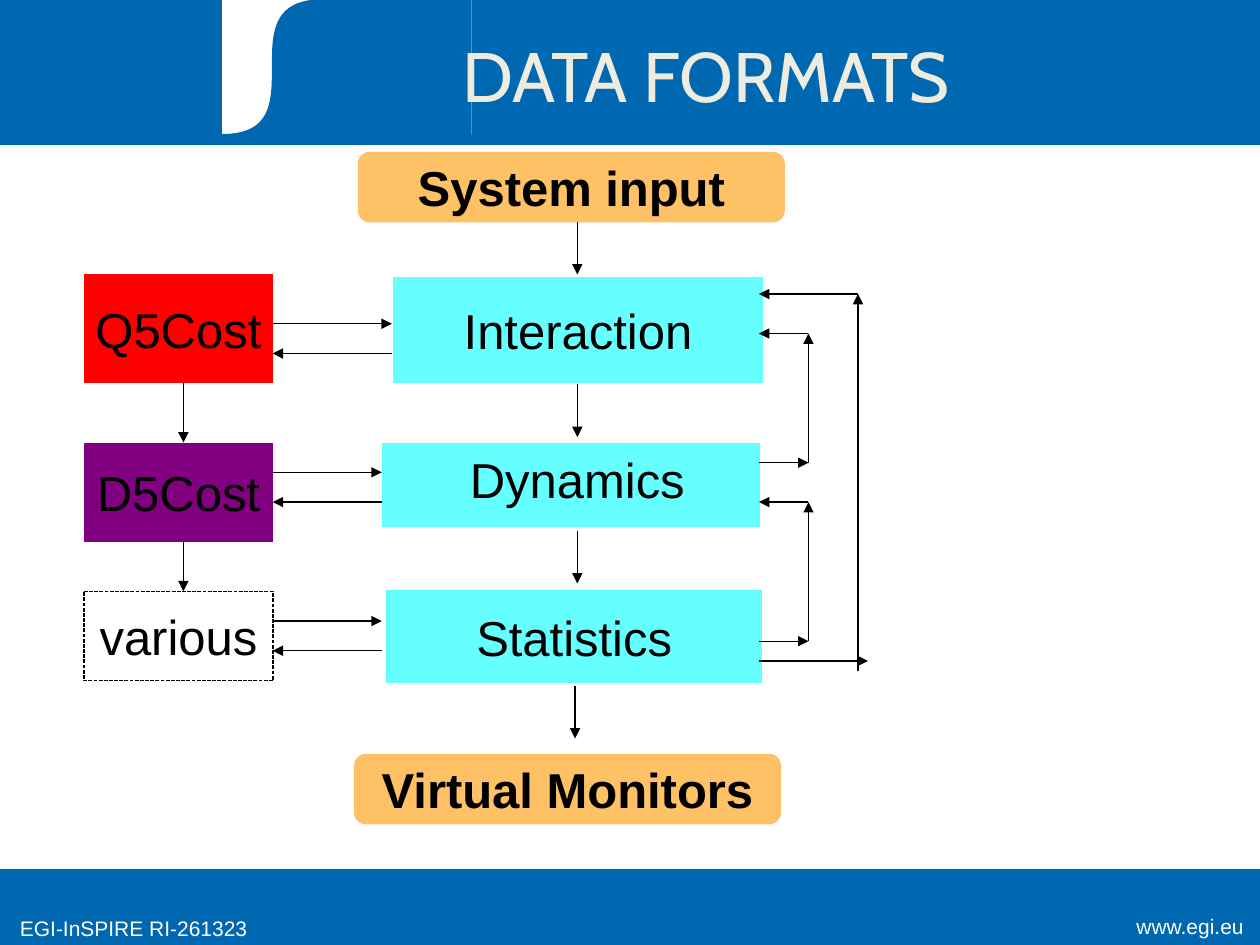
from lxml.etree import SubElement
from pptx import Presentation
from pptx.dml.color import RGBColor
from pptx.enum.dml import MSO_LINE
from pptx.enum.shapes import MSO_CONNECTOR, MSO_SHAPE
from pptx.enum.text import MSO_ANCHOR, PP_ALIGN
from pptx.oxml.ns import qn
from pptx.util import Pt


def paint(form, color):
    """Fill a colour format (fill or font) given as a hex string."""
    if hasattr(form, "solid"):
        form.solid()
        form = form.fore_color
    else:
        form = form.color
    form.rgb = RGBColor.from_string(color)


def write(shape, text, color="000000", size=28, face="Arial", bold=False,
          align=PP_ALIGN.CENTER, anchor=MSO_ANCHOR.MIDDLE, wrap=False):
    frame = shape.text_frame
    frame.word_wrap = wrap
    frame.vertical_anchor = anchor
    para = frame.paragraphs[0]
    para.alignment = align
    run = para.add_run()
    run.text = text
    for key, value in {"size": Pt(size), "name": face, "bold": bold}.items():
        setattr(run.font, key, value)
    paint(run.font, color)


deck = Presentation()
deck.slide_width, deck.slide_height = Pt(720), Pt(540)
slide = deck.slides.add_slide(deck.slide_layouts[6])
shapes = slide.shapes
blue, white, cyan, amber = "0067B1", "FFFFFF", "66FFFF", "FFC165"

# Header and footer bands, with the white tab in the header
for x, y, w, h, color in [(0, 496.8, 720, 43.2, blue), (0, 0, 720, 82.4, blue),
                          (127.2, 0, 142, 77, white)]:
    band = shapes.add_shape(MSO_SHAPE.RECTANGLE, Pt(x), Pt(y), Pt(w), Pt(h))
    band.shadow.inherit = False
    paint(band.fill, color)
    paint(band.line.fill, color)
    band.line.width = Pt(0.75)

# S-shaped edge of the tab: a cubic curve sampled in small steps
left, turn, right, base = 127.2, 184.3, 269.2, 77
edge = []
for step in range(41):
    t = step / 40
    s = 1 - t
    edge.append((left * (s**3 + 3 * s * t**2) + turn * (3 * s**2 * t + t**3),
                 base * (s**3 + 3 * s**2 * t)))
pen = shapes.build_freeform(Pt(right), Pt(0), scale=1.0)
pen.add_line_segments([(Pt(x), Pt(y)) for x, y in [(right, base)] + edge])
curve = pen.convert_to_shape()
curve.shadow.inherit = False
paint(curve.fill, blue)
paint(curve.line.fill, blue)
curve.line.width = Pt(0.75)

# Text boxes
top = MSO_ANCHOR.TOP
labels = [
    (604, 518.4, 113.8, 22.3, "www.egi.eu", white, 12, "Arial", PP_ALIGN.RIGHT),
    (4.3, 519.8, 180, 22.3, "EGI-InSPIRE RI-261323", white, 12, "Arial", PP_ALIGN.LEFT),
    (257, 15.1, 482, 55.4, "DATA FORMATS", "EEECE1", 40, "Cabin", PP_ALIGN.LEFT),
]
for x, y, w, h, text, color, size, face, align in labels:
    box = shapes.add_textbox(Pt(x), Pt(y), Pt(w), Pt(h))
    write(box, text, color, size, face, align=align, anchor=top, wrap=True)

# Flow boxes
plain, soft = MSO_SHAPE.FLOWCHART_PROCESS, MSO_SHAPE.FLOWCHART_ALTERNATE_PROCESS
nodes = [
    (plain, 224.6, 158.3, 211.4, 60.5, cyan, "Interaction"),
    (plain, 218.2, 252.9, 216, 48.2, cyan, ""),
    (plain, 220.8, 337.1, 214.6, 53.3, cyan, "Statistics"),
    (soft, 202.3, 430.8, 244, 40.3, amber, "Virtual Monitors"),
    (soft, 204.5, 86.8, 244, 40.3, amber, "System input"),
    (plain, 48, 156.7, 108, 62.4, "FF0000", "Q5Cost"),
    (plain, 48, 252.9, 108, 56.9, "800080", "D5Cost"),
    (plain, 48, 337.9, 108, 51.1, white, "various"),
]
for kind, x, y, w, h, color, text in nodes:
    node = shapes.add_shape(kind, Pt(x), Pt(y), Pt(w), Pt(h))
    node.shadow.inherit = False
    paint(node.fill, color)
    if color == white:
        paint(node.line.fill, "000000")
        node.line.width = Pt(0.75)
        node.line.dash_style = MSO_LINE.SQUARE_DOT
    else:
        node.line.fill.background()
    if text:
        write(node, text, bold=kind == soft)

box = shapes.add_textbox(Pt(261.4), Pt(253.4), Pt(137.5), Pt(41))
write(box, "Dynamics", align=PP_ALIGN.LEFT, anchor=top)

# Arrows: downward steps, exchanges with the formats, feedback loops
arrows = [(x, y, x, end) for x, y, end in [
    (329.9, 126.9, 156.9), (329.9, 219.6, 249.8), (329.9, 303.3, 333.4),
    (328.6, 391.8, 422), (104.8, 219, 252.9), (104.8, 309.6, 337.9)]]
for y, x in [(185, 223.9), (269.9, 218.2), (354.9, 218.2)]:
    arrows += [(155.8, y, x, y), (x, y + 17, 155.8, y + 17)]
side, near, far = 433.7, 462, 490.3
for low, high in [(366.4, 286.9), (264.4, 190.6)]:
    arrows += [(side, low, near, low), (near, low, near, high), (near, high, side, high)]
arrows += [(side, 377.7, 496, 377.7), (far, 383.2, far, 168), (far, 168, side, 168)]

for x, y, to_x, to_y in arrows:
    arrow = shapes.add_connector(MSO_CONNECTOR.STRAIGHT, Pt(x), Pt(y), Pt(to_x), Pt(to_y))
    paint(arrow.line.fill, "000000")
    arrow.line.width = Pt(0.75)
    prop = arrow.element.spPr
    SubElement(prop.find(qn("a:ln")), qn("a:tailEnd"), type="triangle")
    SubElement(prop, qn("a:effectLst"))

deck.save("out.pptx")
